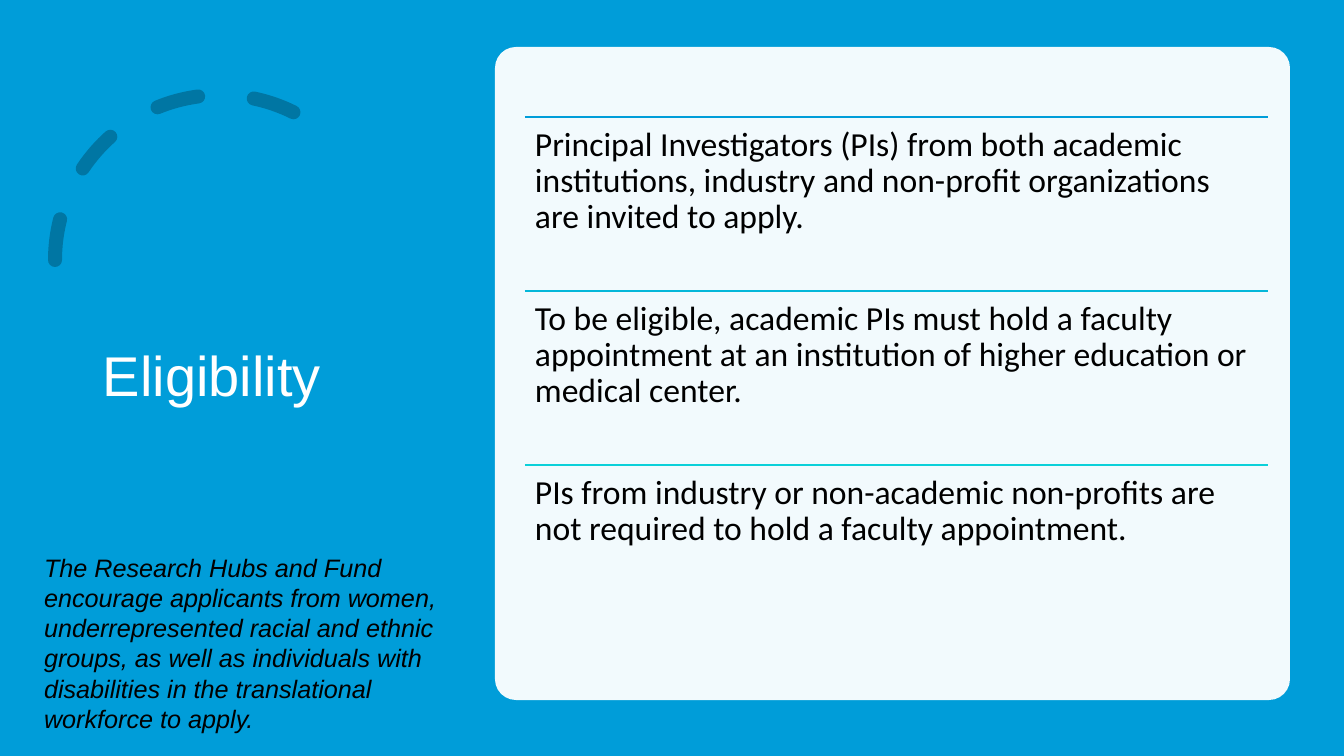
import pptx
import pptx.dml.color
import pptx.enum.dml
import pptx.enum.shapes
import pptx.enum.text
import pptx.oxml.ns
import pptx.util
import lxml.etree

SHAPES = pptx.enum.shapes.MSO_SHAPE
ANCHORS = pptx.enum.text.MSO_ANCHOR
EMU_PER_PX = 914400 / 100.8
WIDTH, HEIGHT = 1344, 756

BLUE, DARK_BLUE, WHITE, BLACK = "009DD9", "0076A3", "FFFFFF", "000000"


def px(length):
    return pptx.util.Emu(round(length * EMU_PER_PX))


def color(hex_string):
    return pptx.dml.color.RGBColor.from_string(hex_string)


def add_xml(parent, tag, **attributes):
    return lxml.etree.SubElement(parent, pptx.oxml.ns.qn(tag), attributes)


class SlideBuilder:
    """Draws styled elements on one slide, measured in px."""

    def __init__(self, slide):
        self.shapes = slide.shapes

    def shape(self, kind, left, top, width, height, fill=None):
        shape = self.shapes.add_shape(kind, px(left), px(top), px(width), px(height))
        shape.shadow.inherit = False
        shape.line.fill.background()
        if fill:
            shape.fill.solid()
            shape.fill.fore_color.rgb = color(fill)
        else:
            shape.fill.background()
        return shape

    def card(self, left, top, width, height, fill, opacity):
        card = self.shape(SHAPES.ROUNDED_RECTANGLE, left, top, width, height, fill)
        card.adjustments[0] = 0.032
        solid_color = card.element.spPr.find(".//" + pptx.oxml.ns.qn("a:srgbClr"))
        add_xml(solid_color, "a:alpha", val=str(opacity * 1000))

    def dashed_arc(self, left, top, size, line_color, weight):
        arc = self.shape(SHAPES.ARC, left, top, size, size)
        arc.adjustments[0], arc.adjustments[1] = 146.13, 0
        arc.element.spPr.find(pptx.oxml.ns.qn("a:xfrm")).set("flipH", "1")
        arc.line.color.rgb = color(line_color)
        arc.line.width = pptx.util.Pt(weight)
        arc.line.dash_style = pptx.enum.dml.MSO_LINE.DASH
        arc.element.spPr.find(pptx.oxml.ns.qn("a:ln")).set("cap", "rnd")

    def rule(self, left, top, width, line_color):
        rule = self.shapes.add_connector(
            pptx.enum.shapes.MSO_CONNECTOR.STRAIGHT,
            px(left), px(top), px(left + width), px(top))
        rule.line.color.rgb = color(line_color)
        rule.line.width = pptx.util.Pt(1)
        add_xml(rule.element.spPr, "a:effectLst")

    def text(self, words, left, top, width, height, font, size, ink,
             italic=False, spacing=None, anchor=ANCHORS.TOP, inset=5):
        box = self.shapes.add_textbox(px(left), px(top), px(width), px(height))
        frame = box.text_frame
        frame.word_wrap = True
        frame.vertical_anchor = anchor
        frame.margin_left = frame.margin_right = px(10)
        frame.margin_top = frame.margin_bottom = px(inset)
        para = frame.paragraphs[0]
        para.text = words
        para.line_spacing = spacing
        para.font.name = font
        para.font.size = pptx.util.Pt(size)
        para.font.italic = italic
        para.font.color.rgb = color(ink)
        return box


def main():
    deck = pptx.Presentation()
    deck.slide_width, deck.slide_height = px(WIDTH), px(HEIGHT)
    page = SlideBuilder(deck.slides.add_slide(deck.slide_layouts[6]))

    # Backdrop, arc and title
    page.shape(SHAPES.RECTANGLE, 0, 0, WIDTH, HEIGHT, BLUE)
    page.dashed_arc(55, 95, 330, DARK_BLUE, 10)
    page.text("Eligibility", 93, 71, 326, 614, "Arial", 40, WHITE,
              spacing=0.9, anchor=ANCHORS.MIDDLE)

    # Card with the ruled requirements
    page.card(495, 47, 795, 653, WHITE, 95)
    requirements = [
        (BLUE, "Principal Investigators (PIs) from both academic institutions, "
               "industry and non-profit organizations are invited to apply."),
        ("05B7D9", "To be eligible, academic PIs must hold a faculty appointment "
                   "at an institution of higher education or medical center."),
        ("0BD0D9", "PIs from industry or non-academic non-profits are not "
                   "required to hold a faculty appointment."),
    ]
    left, first_top, width, row_height = 525, 117, 743, 174
    for row, (rule_color, words) in enumerate(requirements):
        top = first_top + row * row_height
        page.rule(left, top, width, rule_color)
        page.text(words, left, top, width, row_height, "Calibri", 24, BLACK,
                  spacing=0.9, inset=10)

    # Note on applicants
    note = page.text(
        "The Research Hubs and Fund encourage applicants from women, "
        "underrepresented racial and ethnic groups, as well as individuals with "
        "disabilities in the translational workforce to apply.",
        34, 547, 445, 194, "Arial", 18, BLACK, italic=True)
    note.text_frame.auto_size = pptx.enum.text.MSO_AUTO_SIZE.SHAPE_TO_FIT_TEXT

    deck.save("out.pptx")


if __name__ == "__main__":
    main()
